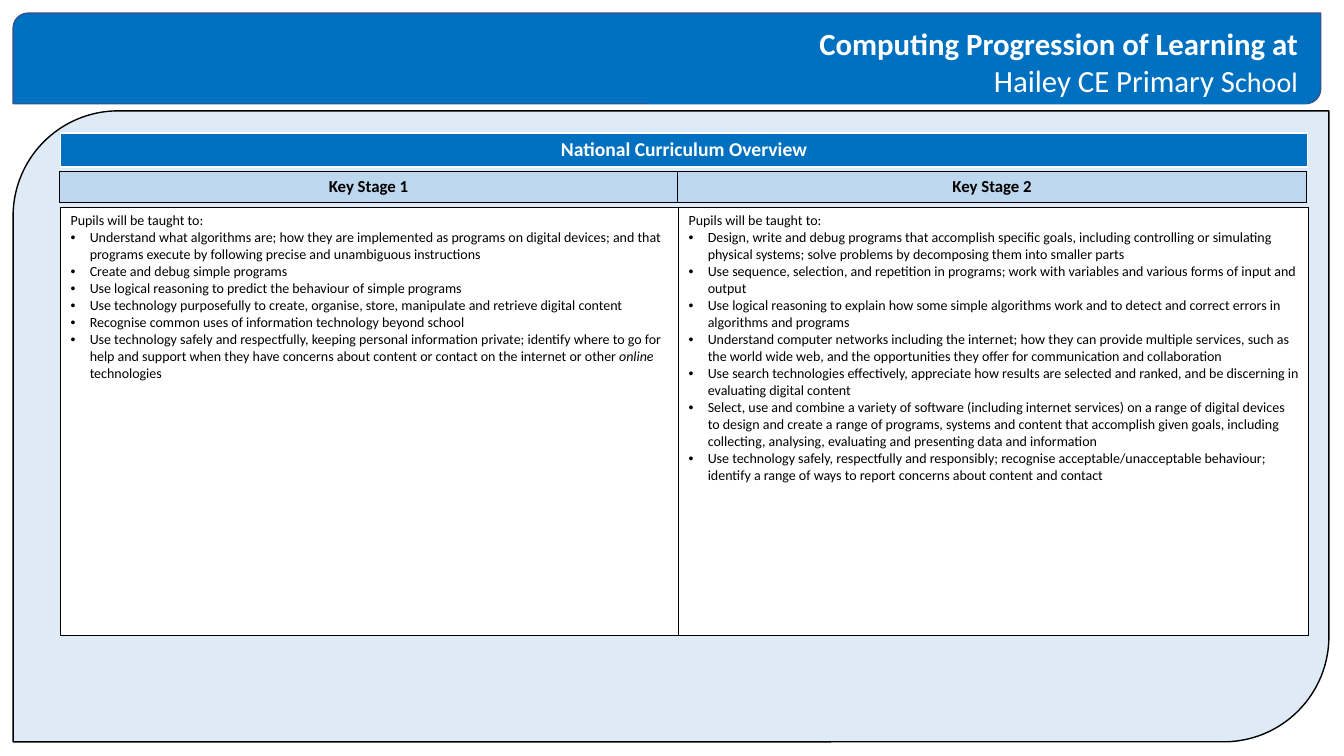
from lxml.etree import SubElement as Sub
from pptx import Presentation
from pptx.dml.color import RGBColor as RGB
from pptx.enum.shapes import MSO_SHAPE as Shape
from pptx.enum.text import PP_ALIGN as Align
from pptx.oxml.ns import qn
from pptx.util import Emu, Inches as In, Pt

BLUE, PALE, SKY = "0070C0", "DEEBF7", "BDD7EE"
WHITE, BLACK = "FFFFFF", "000000"
INTRO = "Pupils will be taught to:"


def paint(item, fill, line=None):
    """Give a shape or cell a solid fill, and a shape its outline if a colour is named."""
    item.fill.solid()
    item.fill.fore_color.rgb = RGB.from_string(fill)
    if line:
        item.line.color.rgb = RGB.from_string(line)
        item.line.width = Pt(1)


def write(para, text, size=10, color=BLACK, bold=False, align=Align.LEFT, bullet=False):
    """Fill a paragraph; words between asterisks become italic."""
    para.alignment = align
    if bullet:
        props = para._p.get_or_add_pPr()
        props.set("marL", str(In(0.19)))
        props.set("indent", str(-In(0.19)))
        Sub(props, qn("a:buFont"), typeface="Arial")
        Sub(props, qn("a:buChar"), char="•")
    for i, part in enumerate(text.split("*")):
        run = para.add_run()
        run.text = part
        font = run.font
        font.name, font.size, font.bold, font.italic = "Calibri", Pt(size), bold, i % 2 == 1
        font.color.rgb = RGB.from_string(color)


deck = Presentation()
deck.slide_width, deck.slide_height = In(13.33), In(7.5)
slide = deck.slides.add_slide(deck.slide_layouts[6])
shapes = slide.shapes

# Header band, title and backing panel
panels = [
    (Shape.ROUND_2_DIAG_RECTANGLE, (0.13, 0.13, 12.97, 0.9), BLUE, "325491"),
    (Shape.RECTANGLE, (6.42, 0.19, 6.55, 0.84), BLUE, None),
    (Shape.ROUND_2_DIAG_RECTANGLE, (0.13, 1.1, 13.05, 6.26), PALE, BLACK),
]
made = []
for kind, box, fill, line in panels:
    panel = shapes.add_shape(kind, *map(In, box))
    panel.shadow.inherit = False
    paint(panel, fill, line)
    if not line:
        panel.line.fill.background()
    made.append(panel)

title = made[1].text_frame
title.word_wrap = True
write(title.paragraphs[0], "Computing Progression of Learning at",
      size=22, color=WHITE, bold=True, align=Align.RIGHT)
school = title.add_paragraph()
write(school, "Hailey CE Primary S", size=22, color=WHITE, align=Align.RIGHT)
write(school, "chool", size=20, color=WHITE, align=Align.RIGHT)

# Three stacked tables: heading, key stages, aims
first = [
    INTRO,
    "Understand what algorithms are; how they are implemented as programs on digital devices; "
    "and that programs execute by following precise and unambiguous instructions",
    "Create and debug simple programs",
    "Use logical reasoning to predict the behaviour of simple programs",
    "Use technology purposefully to create, organise, store, manipulate and retrieve digital content",
    "Recognise common uses of information technology beyond school",
    "Use technology safely and respectfully, keeping personal information private; identify where "
    "to go for help and support when they have concerns about content or contact on the internet "
    "or other *online* technologies",
]
second = [
    INTRO,
    "Design, write and debug programs that accomplish specific goals, including controlling or "
    "simulating physical systems; solve problems by decomposing them into smaller parts",
    "Use sequence, selection, and repetition in programs; work with variables and various forms "
    "of input and output",
    "Use logical reasoning to explain how some simple algorithms work and to detect and correct "
    "errors in algorithms and programs",
    "Understand computer networks including the internet; how they can provide multiple services, "
    "such as the world wide web, and the opportunities they offer for communication and collaboration",
    "Use search technologies effectively, appreciate how results are selected and ranked, and be "
    "discerning in evaluating digital content",
    "Select, use and combine a variety of software (including internet services) on a range of "
    "digital devices to design and create a range of programs, systems and content that accomplish "
    "given goals, including collecting, analysing, evaluating and presenting data and information",
    "Use technology safely, respectfully and responsibly; recognise acceptable/unacceptable "
    "behaviour; identify a range of ways to report concerns about content and contact",
]
head = dict(bold=True, align=Align.CENTER)
tables = [
    (0.6, 1.32, 0.33, [12.37], BLUE, [["National Curriculum Overview"]],
     dict(head, size=14, color=WHITE)),
    (0.59, 1.7, 0.3, [6.13, 6.24], SKY, [["Key Stage 1"], ["Key Stage 2"]], dict(head, size=12)),
    (0.6, 2.06, 4.24, [6.13, 6.25], WHITE, [first, second], {}),
]
for left, top, high, cols, fill, texts, form in tables:
    grid = shapes.add_table(1, len(cols), In(left), In(top), In(sum(cols)), In(high)).table
    grid.first_row = grid.horz_banding = False
    for i, (wide, lines) in enumerate(zip(cols, texts)):
        grid.columns[i].width = In(wide)
        cell = grid.cell(0, i)
        if len(cols) > 1:
            for side in ("a:lnL", "a:lnR", "a:lnT", "a:lnB"):
                edge = Sub(cell._tc.get_or_add_tcPr(), qn(side), w=str(Emu(Pt(0.5))))
                Sub(Sub(edge, qn("a:solidFill")), qn("a:srgbClr"), val=BLACK)
        paint(cell, fill)
        frame = cell.text_frame
        for n, line in enumerate(lines):
            para = frame.add_paragraph() if n else frame.paragraphs[0]
            write(para, line, bullet=n > 0, **form)

deck.save("out.pptx")
